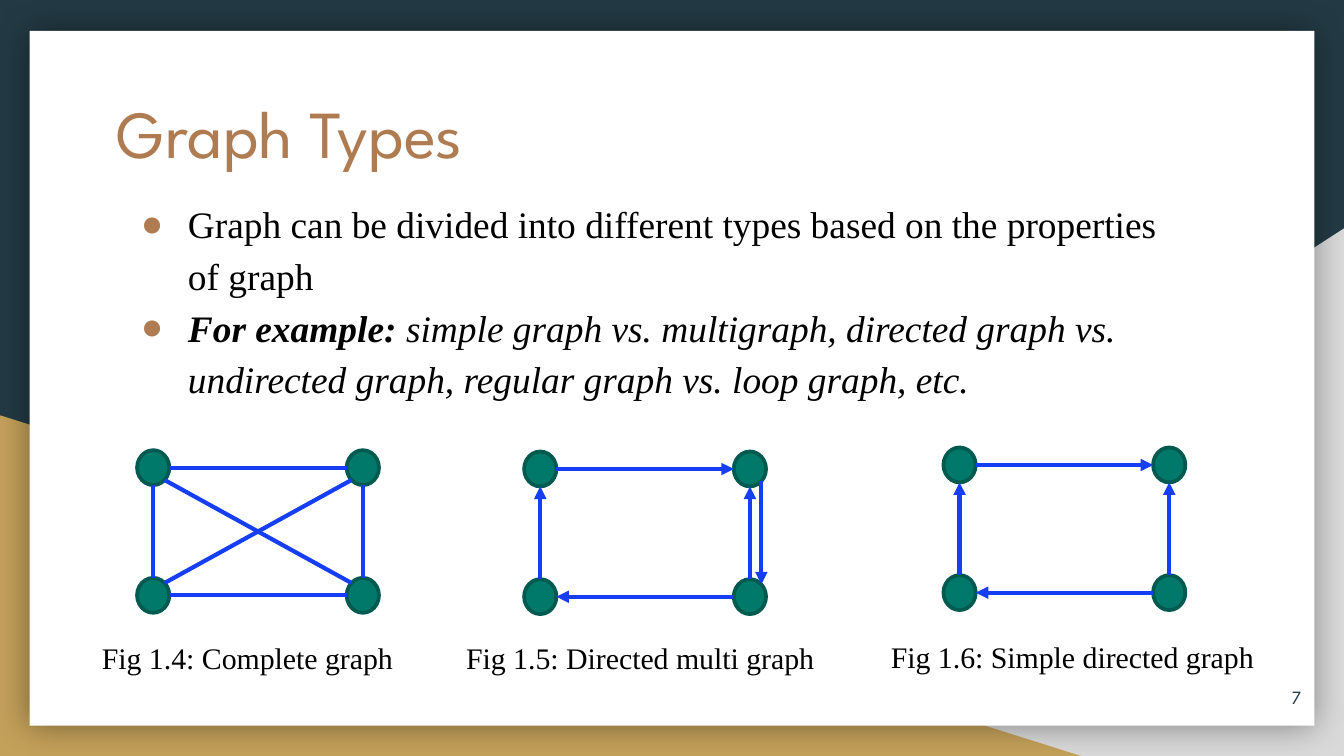
from math import sqrt

from lxml.etree import SubElement
from pptx import Presentation
from pptx.dml.color import RGBColor
from pptx.enum.shapes import MSO_CONNECTOR, MSO_SHAPE
from pptx.enum.text import MSO_ANCHOR, MSO_AUTO_SIZE, PP_ALIGN
from pptx.oxml.ns import qn
from pptx.util import Inches, Pt

COLORS = {
    "navy": "233A44", "grey": "D9D9D9", "gold": "C4A15A", "white": "FFFFFF",
    "copper": "AF7B51", "black": "000000", "node": "00796B",
    "node_line": "005A4F", "edge": "163EF5",
}
HEADING_FONT = "League Spartan"
BODY_FONT = "Times New Roman"

NODE_WIDTH, NODE_HEIGHT = 0.24, 0.26
COLUMN_GAP, ROW_GAP = 1.56, 0.95
NODES = {"top left": (0, 0), "top right": (1, 0),
         "bottom left": (0, 1), "bottom right": (1, 1)}
DIAGONAL = sqrt(0.5)
SIDES = {
    "N": (0, -1), "S": (0, 1), "W": (-1, 0), "E": (1, 0),
    "NW": (-DIAGONAL, -DIAGONAL), "NE": (DIAGONAL, -DIAGONAL),
    "SW": (-DIAGONAL, DIAGONAL), "SE": (DIAGONAL, DIAGONAL),
}
# Each edge: start node, side it leaves, end node, side it reaches
CYCLE = [
    ("top left", "E", "top right", "W"),
    ("bottom left", "N", "top left", "S"),
    ("bottom right", "W", "bottom left", "E"),
    ("bottom right", "N", "top right", "S"),
]
CROSSING = [
    ("top left", "SE", "bottom right", "NW"),
    ("bottom left", "NE", "top right", "SW"),
]
RETURN_EDGE = [("top right", "SE", "bottom right", "NE")]

# Left and top of the first node, edges, directed, caption, caption place
GRAPHS = [
    (7.02, 3.33, CYCLE, True,
     "Fig 1.6: Simple directed graph", (6.53, 4.7, 2.95, 0.37)),
    (3.9, 3.36, CYCLE + RETURN_EDGE, True,
     "Fig 1.5: Directed multi graph", (3.37, 4.71, 2.83, 0.37)),
    (1.02, 3.35, CYCLE + CROSSING, False,
     "Fig 1.4: Complete graph", (0.66, 4.71, 2.4, 0.37)),
]


def color(name):
    return RGBColor.from_string(COLORS[name])


def add_filled_shape(slide, kind, place, fill):
    shape = slide.shapes.add_shape(kind, *map(Inches, place))
    shape.shadow.inherit = False
    shape.fill.solid()
    shape.fill.fore_color.rgb = color(fill)
    shape.line.fill.background()
    return shape


def add_glow_shadow(shape):
    """Put a soft dark shadow evenly around the shape."""
    effects = shape._element.spPr.find(qn("a:effectLst"))
    shadow = SubElement(effects, qn("a:outerShdw"), blurRad=str(Pt(18)),
                        dist="0", dir="0", algn="ctr", rotWithShape="0")
    tint = SubElement(shadow, qn("a:srgbClr"), val=COLORS["black"])
    SubElement(tint, qn("a:alpha"), val="40000")


def add_backdrop(slide):
    slide.background.fill.solid()
    slide.background.fill.fore_color.rgb = color("navy")
    right = add_filled_shape(slide, MSO_SHAPE.RIGHT_TRIANGLE,
                             (3.92, 1.7, 6.08, 3.93), "grey")
    right._element.spPr.find(qn("a:xfrm")).set("flipH", "1")
    add_filled_shape(slide, MSO_SHAPE.RIGHT_TRIANGLE,
                     (0, 3.09, 8.06, 2.54), "gold")
    card = add_filled_shape(slide, MSO_SHAPE.RECTANGLE,
                            (0.22, 0.23, 9.56, 5.17), "white")
    add_glow_shadow(card)


def set_font(paragraph, name, size, font_color):
    paragraph.font.name = name
    paragraph.font.size = Pt(size)
    paragraph.font.color.rgb = color(font_color)


def set_frame(frame, anchor=MSO_ANCHOR.TOP):
    frame.word_wrap = True
    frame.auto_size = MSO_AUTO_SIZE.NONE
    frame.vertical_anchor = anchor
    frame.margin_left = frame.margin_right = Inches(0.1)
    frame.margin_top = frame.margin_bottom = Inches(0.1)


def add_title(slide, text):
    title = slide.shapes.title
    title.left, title.top = Inches(0.77), Inches(0.58)
    title.width, title.height = Inches(3.34), Inches(0.63)
    slide.shapes._spTree.append(title._element)  # in front of the card
    set_frame(title.text_frame)
    title.text_frame.text = text
    paragraph = title.text_frame.paragraphs[0]
    paragraph.alignment = PP_ALIGN.LEFT
    set_font(paragraph, HEADING_FONT, 36, "copper")


def set_bullet(paragraph):
    properties = paragraph._p.get_or_add_pPr()
    properties.set("marL", str(Inches(0.5)))
    properties.set("indent", str(Inches(-0.35)))
    bullet_color = SubElement(properties, qn("a:buClr"))
    SubElement(bullet_color, qn("a:srgbClr"), val=COLORS["copper"])
    SubElement(properties, qn("a:buFont"), typeface=BODY_FONT)
    SubElement(properties, qn("a:buChar"), char="●")


def add_body(slide):
    box = slide.shapes.add_textbox(*map(Inches, (0.8, 1.35, 8, 1.69)))
    frame = box.text_frame
    set_frame(frame)
    general = frame.paragraphs[0]
    general.add_run().text = ("Graph can be divided into different types "
                              "based on the properties of graph")
    example = frame.add_paragraph()
    lead = example.add_run()
    lead.text = "For example:"
    lead.font.bold = True
    example.add_run().text = (" simple graph vs. multigraph, directed graph vs. "
                              "undirected graph, regular graph vs. loop graph, etc.")
    for paragraph in frame.paragraphs:
        paragraph.line_spacing = 1.15
        set_bullet(paragraph)
        set_font(paragraph, BODY_FONT, 20, "black")
    for run in example.runs:
        run.font.italic = True


def add_slide_number(slide, number):
    box = slide.shapes.add_textbox(*map(Inches, (9.18, 4.97, 0.6, 0.43)))
    set_frame(box.text_frame, MSO_ANCHOR.MIDDLE)
    paragraph = box.text_frame.paragraphs[0]
    paragraph.text = number
    paragraph.alignment = PP_ALIGN.RIGHT
    set_font(paragraph, HEADING_FONT, 10, "navy")


def add_caption(slide, text, place):
    box = slide.shapes.add_textbox(*map(Inches, place))
    box.text_frame.word_wrap = False
    box.text_frame.auto_size = MSO_AUTO_SIZE.SHAPE_TO_FIT_TEXT
    paragraph = box.text_frame.paragraphs[0]
    paragraph.text = text
    set_font(paragraph, BODY_FONT, 16, "black")


def add_edge(slide, start, end, directed):
    edge = slide.shapes.add_connector(MSO_CONNECTOR.STRAIGHT,
                                      *map(Inches, start + end))
    edge.line.color.rgb = color("edge")
    edge.line.width = Pt(2.25)
    properties = edge._element.spPr
    if directed:
        SubElement(properties.find(qn("a:ln")), qn("a:tailEnd"), type="triangle")
    SubElement(properties, qn("a:effectLst"))


def add_graph(slide, left, top, edges, directed):
    def node_corner(node):
        column, row = NODES[node]
        return left + column * COLUMN_GAP, top + row * ROW_GAP

    def node_side(node, side):
        x, y = node_corner(node)
        across, down = SIDES[side]
        return (x + NODE_WIDTH / 2 * (1 + across),
                y + NODE_HEIGHT / 2 * (1 + down))

    for node in NODES:
        place = (*node_corner(node), NODE_WIDTH, NODE_HEIGHT)
        shape = add_filled_shape(slide, MSO_SHAPE.OVAL, place, "node")
        shape.line.color.rgb = color("node_line")
        shape.line.width = Pt(2)
    for start, start_side, end, end_side in edges:
        add_edge(slide, node_side(start, start_side),
                 node_side(end, end_side), directed)


def main():
    presentation = Presentation()
    presentation.slide_width = Inches(10)
    presentation.slide_height = Inches(10 * 9 / 16)
    slide = presentation.slides.add_slide(presentation.slide_layouts[5])
    add_backdrop(slide)
    add_title(slide, "Graph Types")
    add_body(slide)
    add_slide_number(slide, "7")
    for left, top, edges, directed, caption, caption_place in GRAPHS:
        add_graph(slide, left, top, edges, directed)
        add_caption(slide, caption, caption_place)
    presentation.save("out.pptx")


if __name__ == "__main__":
    main()
